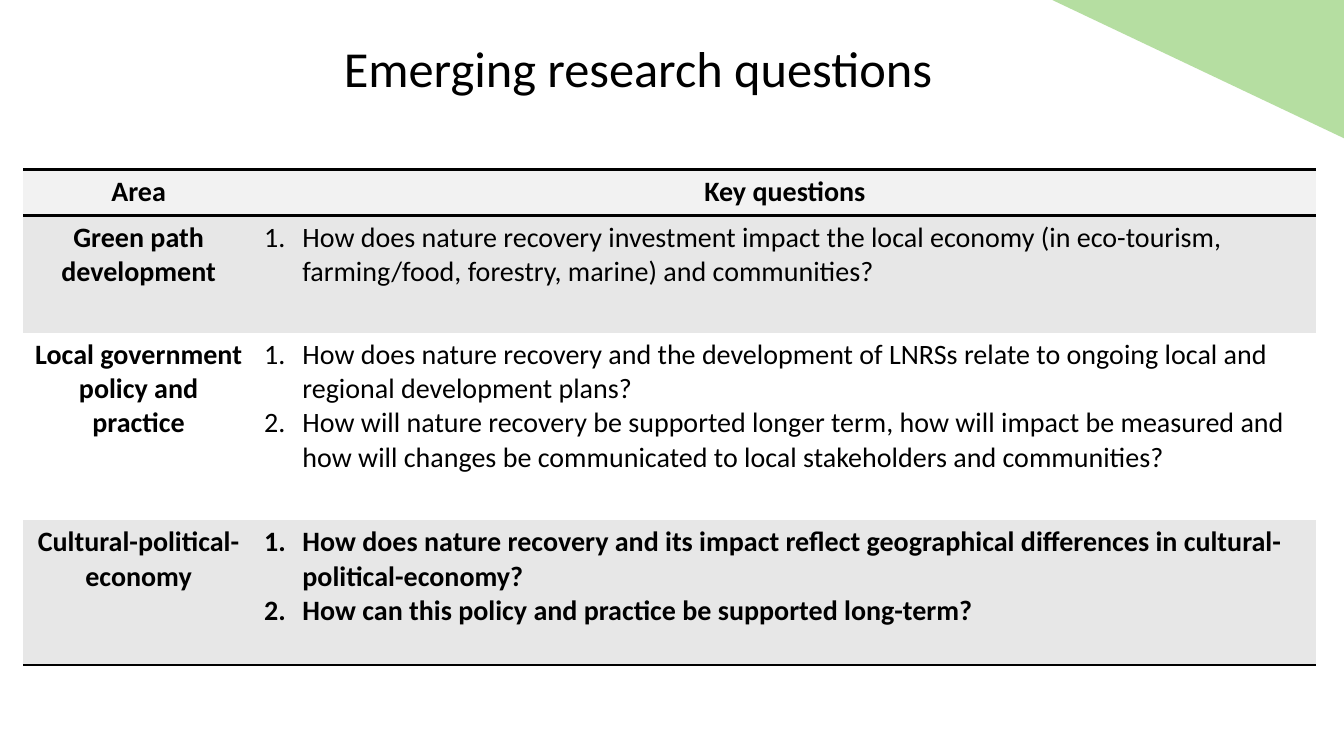
from dataclasses import dataclass

from lxml.etree import SubElement
from pptx import Presentation
from pptx.dml.color import RGBColor
from pptx.enum.shapes import MSO_SHAPE as Preset
from pptx.enum.text import MSO_ANCHOR as Anchor, PP_ALIGN as Align
from pptx.oxml.ns import qn
from pptx.util import Inches, Pt


@dataclass(frozen=True)
class Theme:
    font: str = "Calibri"
    ink: str = "000000"
    green: str = "6DBE45"
    header: str = "F2F2F2"
    band: str = "E7E7E7"
    plain: str = "FFFFFF"
    title_size: int = 36
    table_size: int = 20
    rule_width: int = 2


theme = Theme()
NO_TABLE_STYLE = "{2D5ABB26-0587-4C30-8999-92F81FD0307C}"


def add_run(para, text, size, bold=False):
    span = para.add_run()
    span.text = text
    span.font.name = theme.font
    span.font.size = Pt(size)
    span.font.bold = bold
    span.font.color.rgb = RGBColor.from_string(theme.ink)


def style_cell(cell, color, rules):
    # Borders come before the fill in the cell properties
    properties = cell._tc.get_or_add_tcPr()
    for side in rules:
        line = SubElement(properties, qn(f"a:{side}"), w=str(Pt(theme.rule_width)))
        SubElement(SubElement(line, qn("a:solidFill")), qn("a:srgbClr"), val=theme.ink)
    cell.fill.solid()
    cell.fill.fore_color.rgb = RGBColor.from_string(color)


# Deck and page
deck = Presentation()
deck.slide_width, deck.slide_height = Inches(13.33), Inches(7.5)
page = deck.slides.add_slide(deck.slide_layouts[5])

# Title
title = page.shapes.title
title.left, title.top = Inches(2.11), Inches(0.29)
title.width, title.height = Inches(8.44), Inches(0.84)
title.text_frame.vertical_anchor = Anchor.MIDDLE
para = title.text_frame.paragraphs[0]
para.alignment = Align.CENTER
para.line_spacing = 0.9
add_run(para, "Emerging research questions", theme.title_size)

# Green corner
corner = page.shapes.add_shape(
    Preset.RIGHT_TRIANGLE, Inches(9.15), Inches(-0.61), Inches(4.43), Inches(2.1))
corner.rotation = 180
corner.shadow.inherit = False
corner.line.fill.background()
corner.fill.solid()
corner.fill.fore_color.rgb = RGBColor.from_string(theme.green)
tint = corner._element.spPr.find(f"{qn('a:solidFill')}/{qn('a:srgbClr')}")
SubElement(tint, qn("a:alpha"), val="50000")

# Table content: area, questions, bold questions, row height, fill
areas = [
    ("Green path development", [
        "How does nature recovery investment impact the local economy "
        "(in eco-tourism, farming/food, forestry, marine) and communities?",
    ], False, 1.16, theme.band),
    ("Local government policy and practice", [
        "How does nature recovery and the development of LNRSs relate to "
        "ongoing local and regional development plans?",
        "How will nature recovery be supported longer term, how will impact be measured "
        "and how will changes be communicated to local stakeholders and communities?",
    ], False, 1.86, theme.plain),
    ("Cultural-political-economy", [
        "How does nature recovery and its impact reflect geographical differences "
        "in cultural-political-economy?",
        "How can this policy and practice be supported long-term?",
    ], True, 1.44, theme.band),
]

# Table frame
table = page.shapes.add_table(
    len(areas) + 1, 2, Inches(0.23), Inches(1.68), Inches(12.82), Inches(4.92)).table
table._tbl.tblPr.find(qn("a:tableStyleId")).text = NO_TABLE_STYLE
table.horz_banding = False
for column, width in zip(table.columns, (2.29, 10.53)):
    column.width = Inches(width)

# Header row
table.rows[0].height = Inches(0.46)
for cell, heading in zip(table.rows[0].cells, ("Area", "Key questions")):
    style_cell(cell, theme.header, ("lnT", "lnB"))
    para = cell.text_frame.paragraphs[0]
    para.alignment = Align.CENTER
    add_run(para, heading, theme.table_size, bold=True)

# Area rows
for number, (area, questions, bold, height, color) in enumerate(areas, start=1):
    table.rows[number].height = Inches(height)
    area_cell, question_cell = table.rows[number].cells
    rules = ("lnB",) if number == len(areas) else ()
    for cell in (area_cell, question_cell):
        style_cell(cell, color, rules)

    para = area_cell.text_frame.paragraphs[0]
    para.alignment = Align.CENTER
    add_run(para, area, theme.table_size, bold=True)

    frame = question_cell.text_frame
    for index, question in enumerate(questions):
        para = frame.add_paragraph() if index else frame.paragraphs[0]
        settings = para._p.get_or_add_pPr()
        settings.set("marL", str(Inches(0.38)))
        settings.set("indent", str(Inches(-0.38)))
        SubElement(settings, qn("a:buFont"), typeface="+mj-lt")
        SubElement(settings, qn("a:buAutoNum"), type="arabicPeriod")
        add_run(para, question, theme.table_size, bold)

deck.save("out.pptx")
